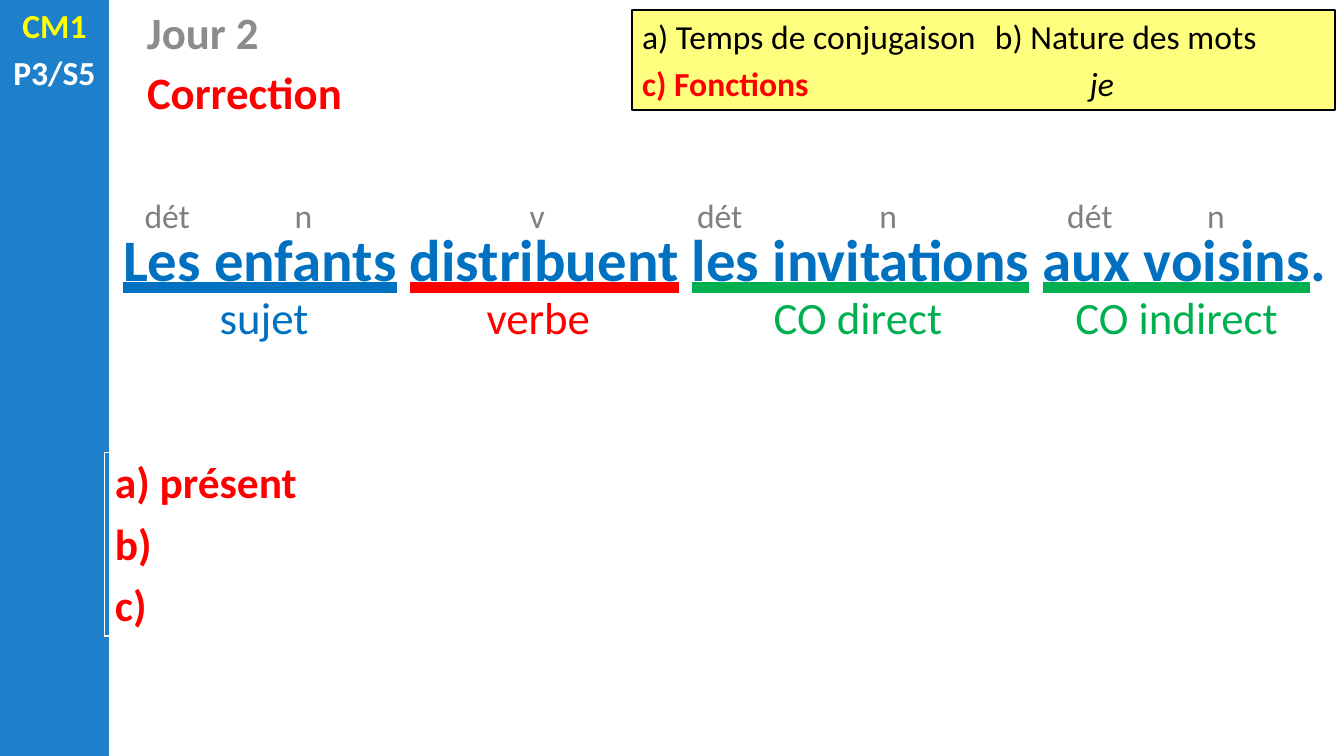
"""Build the grammar correction slide: a sentence with word classes and functions."""
from lxml import etree
from pptx import Presentation
from pptx.dml.color import RGBColor
from pptx.enum.shapes import MSO_SHAPE
from pptx.enum.text import MSO_ANCHOR, MSO_UNDERLINE, PP_ALIGN
from pptx.oxml.ns import qn
from pptx.util import Inches, Pt

RECTANGLE = MSO_SHAPE.RECTANGLE
MIDDLE = MSO_ANCHOR.MIDDLE
HEAVY = MSO_UNDERLINE.HEAVY_LINE
LEFT, CENTER = PP_ALIGN.LEFT, PP_ALIGN.CENTER
COLOURS = {
    "band": "1E7FCB", "level": "FFFF00", "white": "FFFFFF", "black": "000000",
    "day": "8C8C8C", "class": "808080", "red": "FF0000", "blue": "0070C0",
    "green": "00B050",
}

deck = Presentation()
deck.slide_width, deck.slide_height = Inches(13.33), Inches(7.5)
COL, ROW = deck.slide_width / 100, deck.slide_height / 100
slide = deck.slides.add_slide(deck.slide_layouts[6])


def cells(left, top, width, height):
    return int(left * COL), int(top * ROW), int(width * COL), int(height * ROW)


def write(frame, lines, size, align=LEFT, bold=False):
    frame.word_wrap = True
    frame.text = "\n".join(text for text, _ in lines)
    for paragraph, (_, colour) in zip(frame.paragraphs, lines):
        paragraph.alignment = align
        paragraph.space_before = Pt(0.2 * size)
        for run in paragraph.runs:
            run.font.size, run.font.name, run.font.bold = Pt(size), "Calibri", bold
            run.font.color.rgb = RGBColor.from_string(COLOURS[colour])


band = slide.shapes.add_shape(RECTANGLE, *cells(0, 0, 8.1, 100))
instructions = slide.shapes.add_shape(RECTANGLE, *cells(47.04, 1.33, 52.29, 13.2))
for panel, colour in ((band, "band"), (instructions, "level")):
    panel.shadow.inherit = False
    panel.fill.solid()
    panel.fill.fore_color.rgb = RGBColor.from_string(COLOURS[colour])
band.line.fill.background()
instructions.line.color.rgb = RGBColor.from_string(COLOURS["black"])
instructions.line.width = Pt(1.5)
yellow = instructions.fill._xPr.find(qn("a:solidFill"))[0]
etree.SubElement(yellow, qn("a:alpha"), val="50000")

instructions.text_frame.vertical_anchor = MIDDLE
write(instructions.text_frame, [
    ("a) Temps de conjugaison\tb) Nature des mots", "black"),
    ("c) Fonctions", "red"),
], 24)
functions = instructions.text_frame.paragraphs[1]
functions.runs[0].font.bold = True
pronoun = functions.add_run()
pronoun.text = "\tje"
pronoun.font.size, pronoun.font.name, pronoun.font.italic = Pt(24), "Calibri", True
pronoun.font.color.rgb = RGBColor.from_string(COLOURS["black"])
tabs = etree.SubElement(functions._p.get_or_add_pPr(), qn("a:tabLst"))
etree.SubElement(tabs, qn("a:tab"), pos=str(Inches(4.44)), algn="l")

headings = [
    (cells(0, 0, 8.1, 13.2), [("CM1", "level"), ("P3/S5", "white")], 24, CENTER),
    (cells(10.2, 0, 35, 8.53), [("Jour 2", "day")], 32, LEFT),
    (cells(10.2, 7.87, 36.23, 8.53), [("Correction", "red")], 32, LEFT),
]
for place, lines, size, align in headings:
    write(slide.shapes.add_textbox(*place).text_frame, lines, size, align, True)

groups = [
    ("Les enfants", "blue", "sujet", 19.65, [("dét", 12.45), ("n", 22.58)]),
    ("distribuent", "red", "verbe", 40.06, [("v", 39.98)]),
    ("les invitations", "green", "CO direct", 63.84, [("dét", 53.56), ("n", 66.09)]),
    ("aux voisins", "green", "CO indirect", 87.55, [("dét", 81.1), ("n", 90.47)]),
]
sentence = slide.shapes.add_textbox(*cells(7.8, 28.8, 92.2, 10.8)).text_frame
sentence.word_wrap = True
sentence.paragraphs[0].alignment = CENTER
for index, (words, colour, role, middle, classes) in enumerate(groups):
    ending = "." if index == len(groups) - 1 else " "
    for text, underline in ((words, HEAVY), (ending, False)):
        run = sentence.paragraphs[0].add_run()
        run.text = text
        run.font.size, run.font.bold, run.font.underline = Pt(42), True, underline
        run.font.color.rgb = RGBColor.from_string(COLOURS["blue"])
        if underline:
            stroke = etree.SubElement(run.font._element, qn("a:uFill"))
            fill = etree.SubElement(stroke, qn("a:solidFill"))
            etree.SubElement(fill, qn("a:srgbClr"), val=COLOURS[colour])
        run.font.name = "Calibri"
    role_box = slide.shapes.add_textbox(*cells(middle - 9, 37.6, 18, 8.53))
    write(role_box.text_frame, [(role, colour)], 32, CENTER)
    for word_class, centre in classes:
        class_box = slide.shapes.add_textbox(*cells(centre - 3.38, 25.07, 6.75, 6.67))
        write(class_box.text_frame, [(word_class, "class")], 24, CENTER)

answers = slide.shapes.add_table(1, 1, *cells(7.8, 59.87, 92.2, 24.27)).table
answers.first_row = answers.horz_banding = False
answer = answers.cell(0, 0)
answer.fill.background()
write(answer.text_frame, [(text, "red") for text in ("a) présent", "b)", "c)")], 31, bold=True)
for paragraph in answer.text_frame.paragraphs:
    paragraph.space_before, paragraph.space_after = Pt(0), Pt(6)

deck.save("out.pptx")
